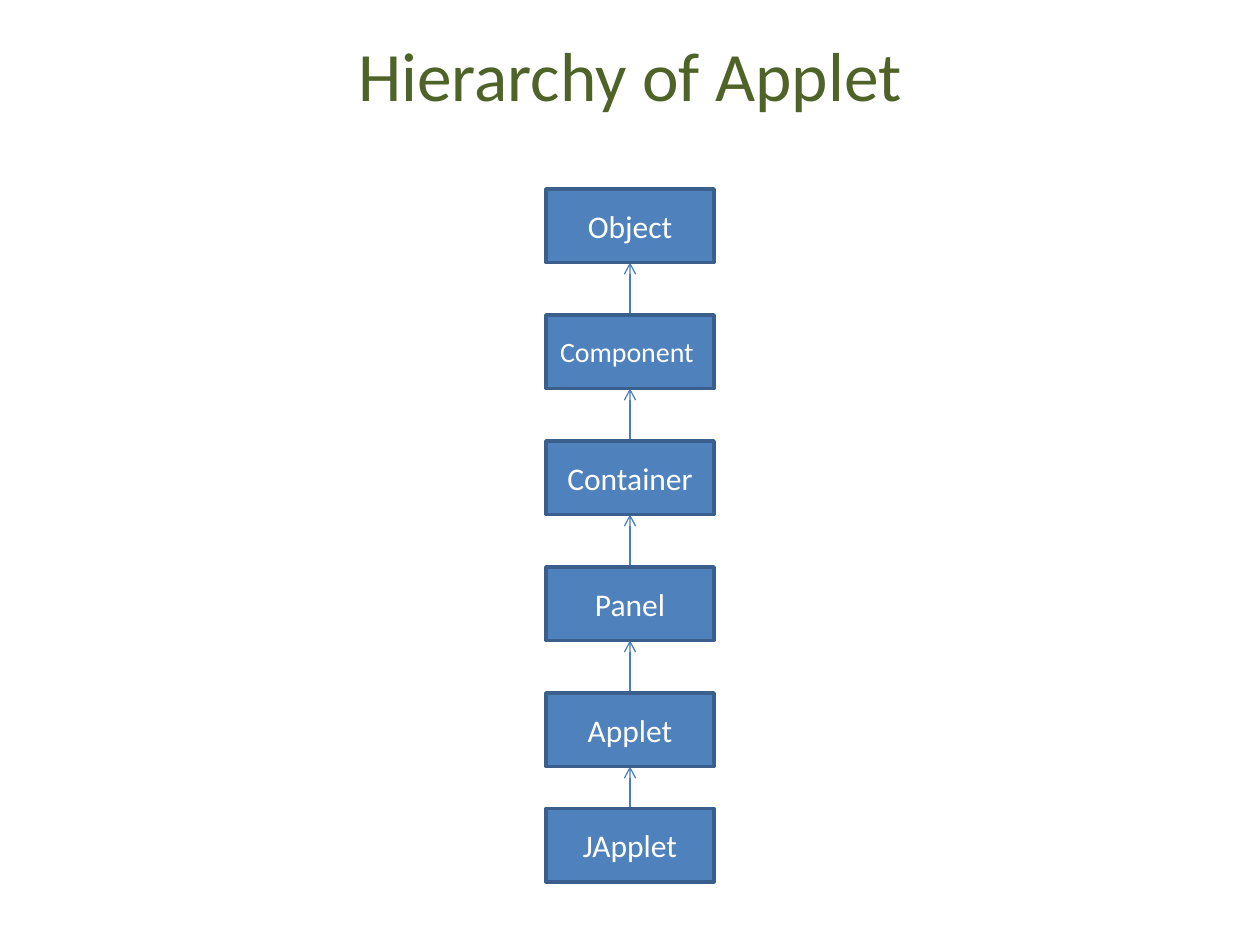
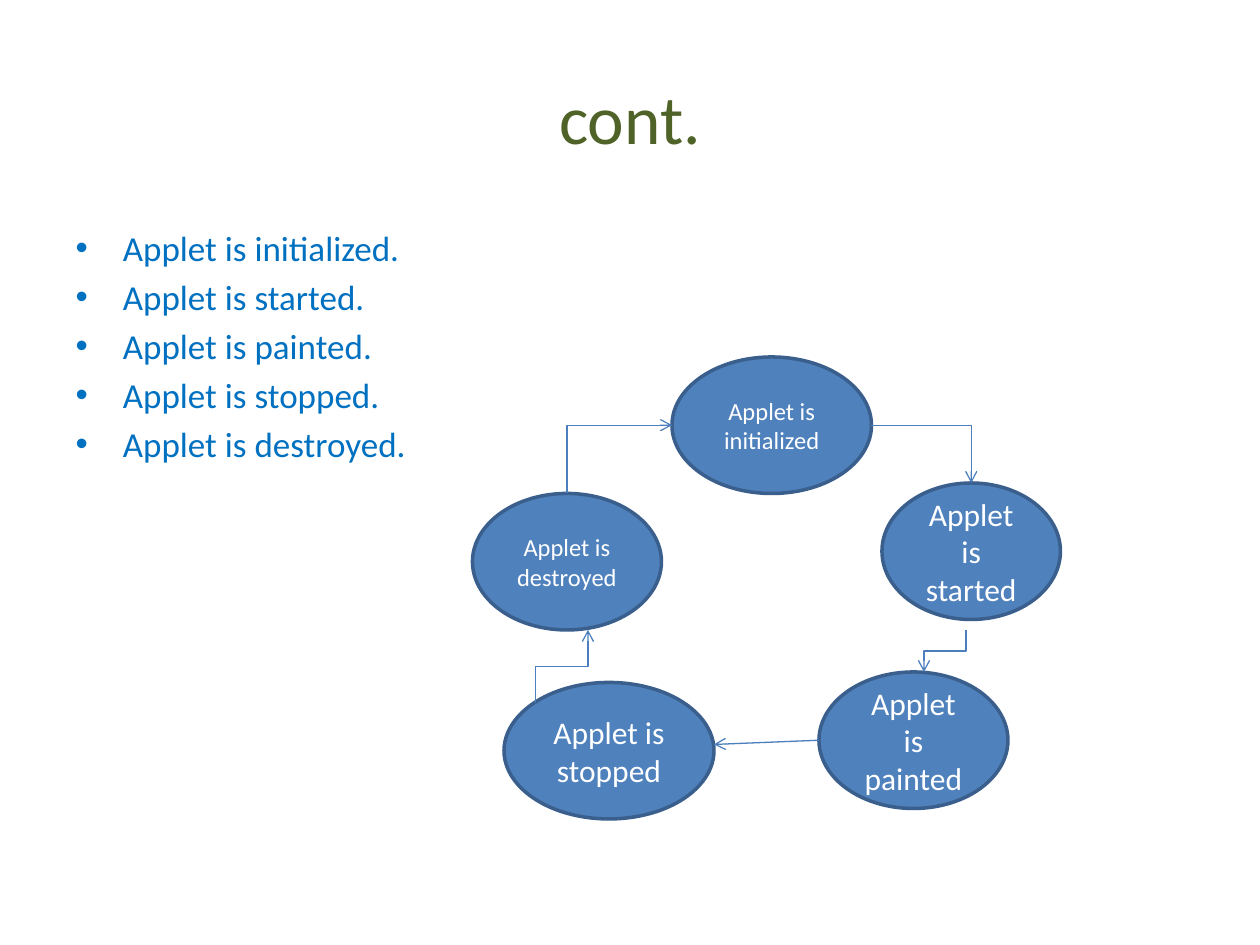
from dataclasses import dataclass

import lxml.etree
import pptx
import pptx.dml.color
import pptx.enum.shapes
import pptx.enum.text
import pptx.oxml.ns
import pptx.util
from pptx.shapes.autoshape import Shape
from pptx.slide import Slide

Preset = pptx.enum.shapes.MSO_SHAPE
Route = pptx.enum.shapes.MSO_CONNECTOR
Anchor = pptx.enum.text.MSO_ANCHOR
Align = pptx.enum.text.PP_ALIGN
Point = tuple[float, float]

# The slide is a grid of 120 columns and 90 rows, twelve to the inch.
COLUMNS, ROWS, CELLS_PER_INCH = 120, 90, 12


@dataclass(frozen=True)
class Theme:
    font: str = "Calibri"
    title: str = "4F6228"
    body: str = "0070C0"
    node_fill: str = "4F81BD"
    node_line: str = "3A5F8C"
    node_text: str = "FFFFFF"
    arrow: str = "4B7EBC"
    title_size: float = 39.6
    body_size: float = 20
    node_size: float = 18
    node_line_width: float = 2
    arrow_width: float = 0.75


@dataclass(frozen=True)
class Node:
    text: str
    column: float
    row: float
    columns: float
    rows: float
    size: float = 18


@dataclass(frozen=True)
class Arrow:
    start: Point
    end: Point
    preset: str = "line"
    vertical_start: bool = False


THEME = Theme()

BOX_COLUMN, BOX_COLUMNS, BOX_ROWS = 52, 16, 7
FIRST_BOX_ROW, LAST_BOX_ROW, BOX_STEP = 18, 77, 12
CLASSES = ("Object", "Component ", "Container", "Panel", "Applet", "JApplet")
SMALLER_CLASS_SIZES = {"Component ": 16}

STATES = ("initialized", "started", "painted", "stopped", "destroyed")
STATE_NODES = (
    Node("Applet is initialized", 64, 34, 19, 13, 14),
    Node("Applet is started", 84, 46, 17, 13),
    Node("Applet is painted", 78, 64, 18, 13),
    Node("Applet is stopped", 48, 65, 20, 13),
    Node("Applet is destroyed", 45, 47, 18, 13, 14),
)
STATE_ARROWS = (
    Arrow((83, 40.5), (92.5, 46), "bentConnector2"),
    Arrow((92, 60), (88, 64), "bentConnector3", True),
    Arrow((78, 70.5), (68, 70.9), "line"),
    Arrow((51, 67), (56, 60), "bentConnector3", True),
    Arrow((54, 47), (64, 40.5), "bentConnector2", True),
)


def cells(count: float) -> pptx.util.Length:
    return pptx.util.Inches(count / CELLS_PER_INCH)


def color(value: str) -> pptx.dml.color.RGBColor:
    return pptx.dml.color.RGBColor.from_string(value)


def place(shape: Shape, column: float, row: float, columns: float, rows: float) -> None:
    shape.left, shape.top = cells(column), cells(row)
    shape.width, shape.height = cells(columns), cells(rows)


def write(shape: Shape, lines: list[str], size: float, text_color: str) -> None:
    frame = shape.text_frame
    frame.text = "\n".join(lines)
    frame.word_wrap = True
    frame.auto_size = pptx.enum.text.MSO_AUTO_SIZE.NONE
    for paragraph in frame.paragraphs:
        paragraph.font.name = THEME.font
        paragraph.font.size = pptx.util.Pt(size)
        paragraph.font.color.rgb = color(text_color)


def add_title(slide: Slide, text: str, row: float = 3.6) -> Shape:
    title = slide.shapes.title
    place(title, 6, row, 108, 15)
    write(title, [text], THEME.title_size, THEME.title)
    title.text_frame.paragraphs[0].alignment = Align.CENTER
    title.text_frame.vertical_anchor = Anchor.MIDDLE
    return title


def add_node(slide: Slide, node: Node, preset: Preset) -> None:
    shape = slide.shapes.add_shape(
        preset, cells(node.column), cells(node.row), cells(node.columns), cells(node.rows)
    )
    shape.shadow.inherit = False
    shape.fill.solid()
    shape.fill.fore_color.rgb = color(THEME.node_fill)
    shape.line.color.rgb = color(THEME.node_line)
    shape.line.width = pptx.util.Pt(THEME.node_line_width)
    write(shape, [node.text], node.size, THEME.node_text)
    shape.text_frame.paragraphs[0].alignment = Align.CENTER
    shape.text_frame.vertical_anchor = Anchor.MIDDLE


def add_arrow(slide: Slide, arrow: Arrow) -> None:
    """Draw an arrow; one that leaves vertically is laid out flat, then turned by 90 degrees."""
    (x1, y1), (x2, y2) = arrow.start, arrow.end
    if arrow.vertical_start:
        middle_x, middle_y = (x1 + x2) / 2, (y1 + y2) / 2
        half_x, half_y = (y2 - y1) / 2, (x1 - x2) / 2
        x1, x2 = middle_x - half_x, middle_x + half_x
        y1, y2 = middle_y - half_y, middle_y + half_y
    route = Route.STRAIGHT if arrow.preset == "line" else Route.ELBOW
    connector = slide.shapes.add_connector(route, cells(x1), cells(y1), cells(x2), cells(y2))
    connector.line.color.rgb = color(THEME.arrow)
    connector.line.width = pptx.util.Pt(THEME.arrow_width)
    qualified = pptx.oxml.ns.qn
    properties = connector.element.spPr
    properties.find(qualified("a:prstGeom")).set("prst", arrow.preset)
    if arrow.vertical_start:
        properties.find(qualified("a:xfrm")).set("rot", str(90 * 60000))
    line = properties.find(qualified("a:ln"))
    lxml.etree.SubElement(line, qualified("a:tailEnd"), type="arrow")
    lxml.etree.SubElement(properties, qualified("a:effectLst"))


def build_hierarchy(slide: Slide) -> None:
    title = add_title(slide, "Hierarchy of Applet", row=3.1)
    title.text_frame.vertical_anchor = Anchor.TOP
    title.text_frame.margin_top = 0
    center = BOX_COLUMN + BOX_COLUMNS / 2
    for level in range(len(CLASSES) - 1):
        bottom = FIRST_BOX_ROW + level * BOX_STEP + BOX_ROWS
        add_arrow(slide, Arrow((center, bottom + 6), (center, bottom)))
    for level, name in enumerate(CLASSES):
        row = min(FIRST_BOX_ROW + level * BOX_STEP, LAST_BOX_ROW)
        size = SMALLER_CLASS_SIZES.get(name, THEME.node_size)
        add_node(slide, Node(name, BOX_COLUMN, row, BOX_COLUMNS, BOX_ROWS, size), Preset.RECTANGLE)


def build_life_cycle(slide: Slide) -> None:
    add_title(slide, "cont.")
    body = slide.placeholders[1]
    place(body, 6, 21, 108, 59.4)
    write(body, [f"Applet is {state}." for state in STATES], THEME.body_size, THEME.body)
    for node in STATE_NODES:
        add_node(slide, node, Preset.OVAL)
    for arrow in STATE_ARROWS:
        add_arrow(slide, arrow)


def main() -> None:
    presentation = pptx.Presentation()
    presentation.slide_width, presentation.slide_height = cells(COLUMNS), cells(ROWS)
    layouts = presentation.slide_layouts
    build_hierarchy(presentation.slides.add_slide(layouts.get_by_name("Title Only")))
    build_life_cycle(presentation.slides.add_slide(layouts.get_by_name("Title and Content")))
    presentation.save("out.pptx")


if __name__ == "__main__":
    main()
